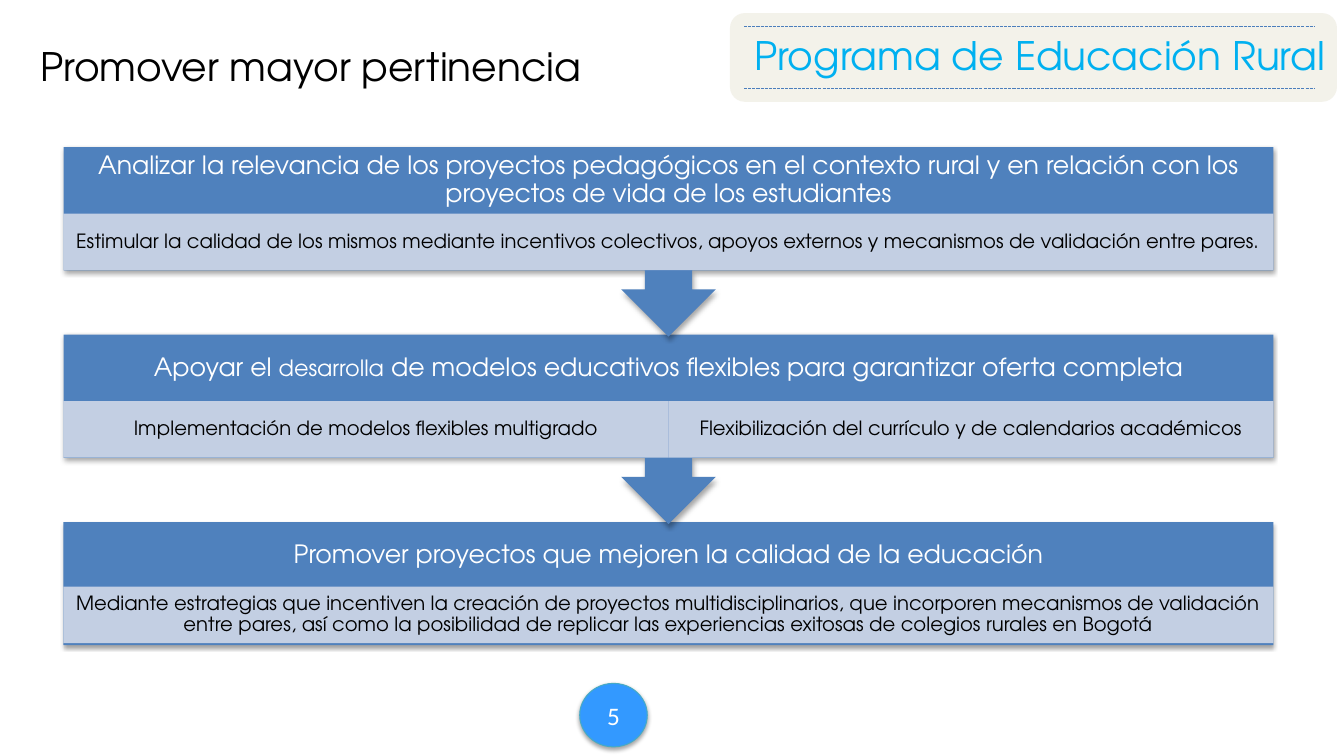
from lxml import etree
from pptx import Presentation
from pptx.dml.color import RGBColor
from pptx.enum.dml import MSO_LINE
from pptx.enum.shapes import MSO_CONNECTOR, MSO_SHAPE
from pptx.enum.text import MSO_ANCHOR, MSO_AUTO_SIZE, PP_ALIGN
from pptx.oxml import parse_xml
from pptx.oxml.ns import nsdecls, qn
from pptx.util import Inches, Pt

RECTANGLE = MSO_SHAPE.RECTANGLE
ROUNDED = MSO_SHAPE.ROUNDED_RECTANGLE
OVAL = MSO_SHAPE.OVAL
CALLOUT = MSO_SHAPE.UP_ARROW_CALLOUT
STRAIGHT = MSO_CONNECTOR.STRAIGHT
DASHED = MSO_LINE.SQUARE_DOT
LEFT, CENTER = PP_ALIGN.LEFT, PP_ALIGN.CENTER
TOP, MIDDLE = MSO_ANCHOR.TOP, MSO_ANCHOR.MIDDLE
GROW = MSO_AUTO_SIZE.SHAPE_TO_FIT_TEXT

FONT = "TeX Gyre Adventor"
BLUE, PALE, WHITE, BLACK = "4F81BD", "D0D8E8", "FFFFFF", "000000"
FLOW_LEFT, FLOW_TOP, FLOW_WIDTH = 0.63, 1.46, 12
STEP_PITCH, CALLOUT_HEIGHT, LAST_HEIGHT = 1.86, 1.88, 1.22
HEADING_HEIGHT, DETAIL_HEIGHT = 0.66, 0.56

STEPS = [
    (["Analizar la relevancia de los proyectos pedagógicos en el contexto rural y en "
      "relación con los proyectos de vida de los estudiantes"],
     ["Estimular la calidad de los mismos mediante incentivos colectivos, apoyos "
      "externos y mecanismos de validación entre pares."]),
    (["Apoyar el ", "desarrolla", " de modelos educativos flexibles para garantizar oferta completa"],
     ["Implementación de modelos flexibles multigrado",
      "Flexibilización del currículo y de calendarios académicos"]),
    (["Promover proyectos que mejoren la calidad de la educación"],
     ["Mediante estrategias que incentiven la creación de proyectos multidisciplinarios, "
      "que incorporen mecanismos de validación entre pares, así como la posibilidad de "
      "replicar las experiencias exitosas de colegios rurales en Bogotá"]),
]


def color(value):
    return RGBColor.from_string(value)


def box(*lengths):
    return [Inches(length) for length in lengths]


def add_shadow(shape):
    shape._element.spPr.append(parse_xml(
        f'<a:effectLst {nsdecls("a")}>'
        '<a:outerShdw blurRad="40000" dist="23000" dir="5400000" rotWithShape="0">'
        '<a:srgbClr val="000000"><a:alpha val="35000"/></a:srgbClr>'
        '</a:outerShdw></a:effectLst>'))


def add_block(slide, kind, place, fill, opacity=100, shadow=False):
    block = slide.shapes.add_shape(kind, *box(*place))
    block.fill.solid()
    block.fill.fore_color.rgb = color(fill)
    block.line.fill.background()
    if opacity < 100:
        fill_color = block._element.spPr.find(qn("a:solidFill"))[0]
        etree.SubElement(fill_color, qn("a:alpha")).set("val", str(opacity * 1000))
    if shadow:
        add_shadow(block)
    else:
        block.shadow.inherit = False
    return block


def write(shape, pieces, size, ink, align=CENTER, anchor=MIDDLE, font=FONT,
          margins=(0.1, 0.05), spacing=None, small=None):
    frame = shape.text_frame
    frame.word_wrap = True
    frame.vertical_anchor = anchor
    frame.margin_left = frame.margin_right = Inches(margins[0])
    frame.margin_top = frame.margin_bottom = Inches(margins[1])
    paragraph = frame.paragraphs[0]
    paragraph.alignment = align
    if spacing:
        paragraph.line_spacing = spacing
    for index, piece in enumerate(pieces):
        run = paragraph.add_run()
        run.text = piece
        run.font.name = font
        run.font.size = Pt(small if small and index == 1 else size)
        run.font.color.rgb = color(ink)


def add_step(slide, top, heading, details, is_last):
    height = LAST_HEIGHT if is_last else CALLOUT_HEIGHT
    body = add_block(slide, RECTANGLE if is_last else CALLOUT,
                     (FLOW_LEFT, top, FLOW_WIDTH, height), BLUE, shadow=True)
    if not is_last:
        body.rotation = 180
    heading_box = slide.shapes.add_textbox(*box(FLOW_LEFT, top, FLOW_WIDTH, HEADING_HEIGHT))
    write(heading_box, heading, 18, WHITE, margins=(0.14, 0.14), spacing=0.9, small=16)
    detail_top = top + HEADING_HEIGHT - (0.02 if is_last else 0)
    width = FLOW_WIDTH / len(details)
    for column, detail in enumerate(details):
        cell = add_block(slide, RECTANGLE,
                         (FLOW_LEFT + column * width, detail_top, width, DETAIL_HEIGHT),
                         PALE, opacity=90)
        write(cell, [detail], 14, BLACK, margins=(0.11, 0.02), spacing=0.9)


def add_rule(slide, y):
    rule = slide.shapes.add_connector(STRAIGHT, *box(7.38, y, 13.04, y))
    rule.line.color.rgb = color("4B7EBC")
    rule.line.width = Pt(0.75)
    rule.line.dash_style = DASHED
    etree.SubElement(rule._element.spPr, qn("a:effectLst"))


def add_program_banner(slide):
    add_block(slide, ROUNDED, (7.24, 0.13, 6.02, 0.88), "EEECE1", opacity=68)
    program = slide.shapes.add_textbox(*box(7.38, 0.26, 6.02, 0.98))
    write(program, ["Programa de Educación Rural"], 28, "00B0F0", LEFT, TOP)
    program.text_frame.auto_size = GROW
    for y in (0.26, 0.88):
        add_rule(slide, y)


def add_page_badge(slide):
    badge = add_block(slide, OVAL, (5.75, 6.78, 0.67, 0.63), "3399FF")
    badge.line.color.rgb = color("46AAC5")
    badge.line.width = Pt(0.75)
    badge._element.spPr.remove(badge._element.spPr.find(qn("a:effectLst")))
    add_shadow(badge)
    write(badge, ["5"], 18, WHITE, font="Calibri")


def place_title(slide):
    title = slide.shapes.title
    title.left, title.top, title.width, title.height = box(0.3, 0.37, 5.61, 0.57)
    write(title, ["Promover mayor pertinencia"], 28, BLACK, LEFT, TOP)
    title.text_frame.word_wrap = False
    title.text_frame.auto_size = GROW


def main():
    deck = Presentation()
    deck.slide_width, deck.slide_height = box(13.33, 7.5)
    slide = deck.slides.add_slide(deck.slide_layouts[5])
    last = len(STEPS) - 1
    for index in range(last, -1, -1):
        heading, details = STEPS[index]
        add_step(slide, FLOW_TOP + index * STEP_PITCH, heading, details, index == last)
    add_program_banner(slide)
    add_page_badge(slide)
    place_title(slide)
    deck.save("out.pptx")


if __name__ == "__main__":
    main()
